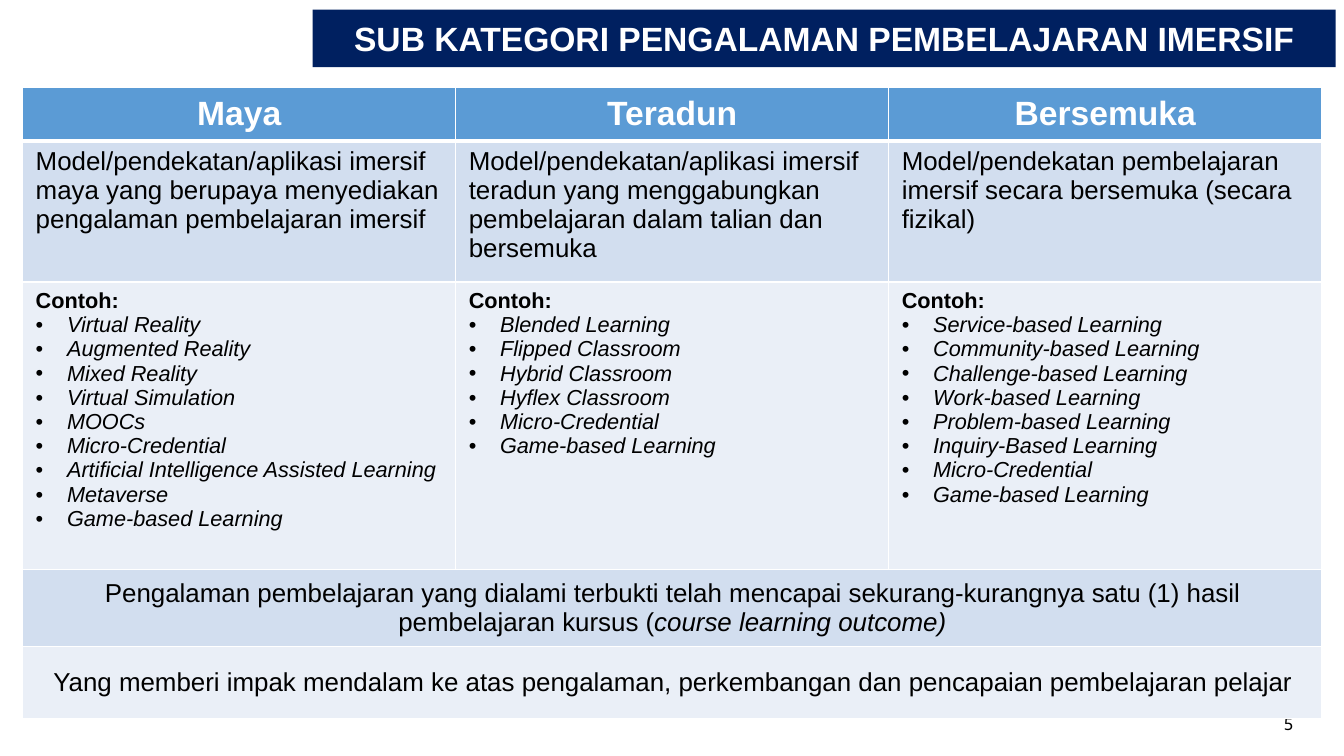
from pptx import Presentation
from pptx.dml.color import RGBColor
from pptx.enum.text import MSO_ANCHOR, MSO_AUTO_SIZE, PP_ALIGN
from pptx.oxml.ns import qn
from pptx.util import Cm, Pt
from lxml import etree

TOP, MIDDLE = MSO_ANCHOR.TOP, MSO_ANCHOR.MIDDLE
LEFT, CENTER = PP_ALIGN.LEFT, PP_ALIGN.CENTER
NO_AUTOFIT = MSO_AUTO_SIZE.NONE
TITLE_ONLY = 5

NAVY, BLUE, PALE, PALER = "002060", "5B9BD5", "D2DEEF", "EAEFF7"
WHITE, BLACK = "FFFFFF", "000000"

HEADING = {"size": Pt(24), "bold": True, "color": WHITE}
BODY = {"size": Pt(18.5)}
LABEL = {"size": Pt(15.5), "bold": True}
EXAMPLE = {"size": Pt(15.5), "italic": True}

CATEGORIES = [
    ("Maya",
     "Model/pendekatan/aplikasi imersif maya yang berupaya menyediakan "
     "pengalaman pembelajaran imersif",
     ["Virtual Reality", "Augmented Reality", "Mixed Reality",
      "Virtual Simulation", "MOOCs", "Micro-Credential",
      "Artificial Intelligence Assisted Learning", "Metaverse",
      "Game-based Learning"]),
    ("Teradun",
     "Model/pendekatan/aplikasi imersif teradun yang menggabungkan "
     "pembelajaran dalam talian dan bersemuka",
     ["Blended Learning", "Flipped Classroom", "Hybrid Classroom",
      "Hyflex Classroom", "Micro-Credential", "Game-based Learning"]),
    ("Bersemuka",
     "Model/pendekatan pembelajaran imersif secara bersemuka (secara fizikal)",
     ["Service-based Learning", "Community-based Learning",
      "Challenge-based Learning", "Work-based Learning",
      "Problem-based Learning", "Inquiry-Based Learning",
      "Micro-Credential", "Game-based Learning"]),
]
OUTCOMES = [
    [("Pengalaman pembelajaran yang dialami terbukti telah mencapai "
      "sekurang-kurangnya satu (1) hasil pembelajaran kursus (", BODY),
     ("course learning outcome)", {**BODY, "italic": True})],
    [("Yang memberi impak mendalam ke atas pengalaman, perkembangan dan "
      "pencapaian pembelajaran pelajar", BODY)],
]
ROW_HEIGHTS = [1.31, 3.56, 7.24, 1.95, 1.8]
ROW_FILLS = [BLUE, PALE, PALER, PALE, PALER]
ROW_ANCHORS = [MIDDLE, TOP, TOP, MIDDLE, MIDDLE]


def rgb(value):
    return RGBColor.from_string(value)


class SlideBuilder:
    font_name = "Arial"
    margins = {"margin_left": Cm(0.33), "margin_right": Cm(0.33),
               "margin_top": Cm(0.17), "margin_bottom": Cm(0.17)}

    def __init__(self, prs):
        self.slide = prs.slides.add_slide(prs.slide_layouts[TITLE_ONLY])

    def apply(self, target, values):
        for name, value in values.items():
            setattr(target, name, value)

    def add_runs(self, p, runs, align=LEFT):
        p.alignment = align
        for text, style in runs:
            r = p.add_run()
            r.text = text
            values = {"name": self.font_name, "bold": False, **style}
            r.font.color.rgb = rgb(values.pop("color", BLACK))
            self.apply(r.font, values)

    def bullet(self, p):
        pPr = p._p.get_or_add_pPr()
        pPr.set("marL", str(Cm(0.79)))
        pPr.set("indent", str(-Cm(0.79)))
        etree.SubElement(pPr, qn("a:buFont"), typeface=self.font_name)
        etree.SubElement(pPr, qn("a:buChar"), char="•")

    def title(self, text, *box):
        sp = self.slide.shapes.title
        sp.left, sp.top, sp.width, sp.height = map(Cm, box)
        sp.fill.solid()
        sp.fill.fore_color.rgb = rgb(NAVY)
        tf = sp.text_frame
        self.apply(tf, {**self.margins, "vertical_anchor": MIDDLE,
                        "word_wrap": True, "auto_size": NO_AUTOFIT})
        self.add_runs(tf.paragraphs[0], [(text, HEADING)], CENTER)

    def text(self, text, style, *box):
        tf = self.slide.shapes.add_textbox(*map(Cm, box)).text_frame
        tf.word_wrap = True
        self.add_runs(tf.paragraphs[0], [(text, style)])

    def borders(self, cell, **widths):
        """Draw white cell edges; widths in points override the 1 pt default."""
        tcPr = cell._tc.get_or_add_tcPr()
        for edge in "LRTB":
            ln = etree.SubElement(tcPr, qn(f"a:ln{edge}"),
                                  w=str(Pt(widths.get(edge, 1))))
            fill = etree.SubElement(ln, qn("a:solidFill"))
            etree.SubElement(fill, qn("a:srgbClr"), val=WHITE)

    def table(self, left, top, width):
        rows, cols = len(ROW_HEIGHTS), len(CATEGORIES)
        table = self.slide.shapes.add_table(
            rows, cols, Cm(left), Cm(top), Cm(width),
            Cm(sum(ROW_HEIGHTS))).table
        for row, height in enumerate(ROW_HEIGHTS):
            table.rows[row].height = Cm(height)
            for col in range(cols):
                cell = table.cell(row, col)
                self.borders(cell, **{0: {"B": 3}, 1: {"T": 3}}.get(row, {}))
                cell.fill.solid()
                cell.fill.fore_color.rgb = rgb(ROW_FILLS[row])
                self.apply(cell, {**self.margins,
                                  "vertical_anchor": ROW_ANCHORS[row]})
        for col, (name, description, examples) in enumerate(CATEGORIES):
            heading, summary, listing = (
                table.cell(row, col).text_frame for row in range(3))
            self.add_runs(heading.paragraphs[0], [(name, HEADING)], CENTER)
            self.add_runs(summary.paragraphs[0], [(description, BODY)])
            self.add_runs(listing.paragraphs[0], [("Contoh:", LABEL)])
            for example in examples:
                p = listing.add_paragraph()
                self.bullet(p)
                self.add_runs(p, [(example, EXAMPLE)])
        for row, runs in enumerate(OUTCOMES, start=3):
            cell = table.cell(row, 0)
            cell.merge(table.cell(row, cols - 1))
            self.add_runs(cell.text_frame.paragraphs[0], runs, CENTER)


def main():
    prs = Presentation()
    prs.slide_width, prs.slide_height = Cm(33.87), Cm(19.05)
    s = SlideBuilder(prs)
    s.text("5", {"size": Pt(12), "name": "Noto Sans Mono"},
           32.1, 17.87, 1.55, 1.01)
    s.table(0.57, 2.19, 32.74)
    s.title("SUB KATEGORI PENGALAMAN PEMBELAJARAN IMERSIF",
            7.88, 0.24, 25.78, 1.45)
    prs.save("out.pptx")


if __name__ == "__main__":
    main()
